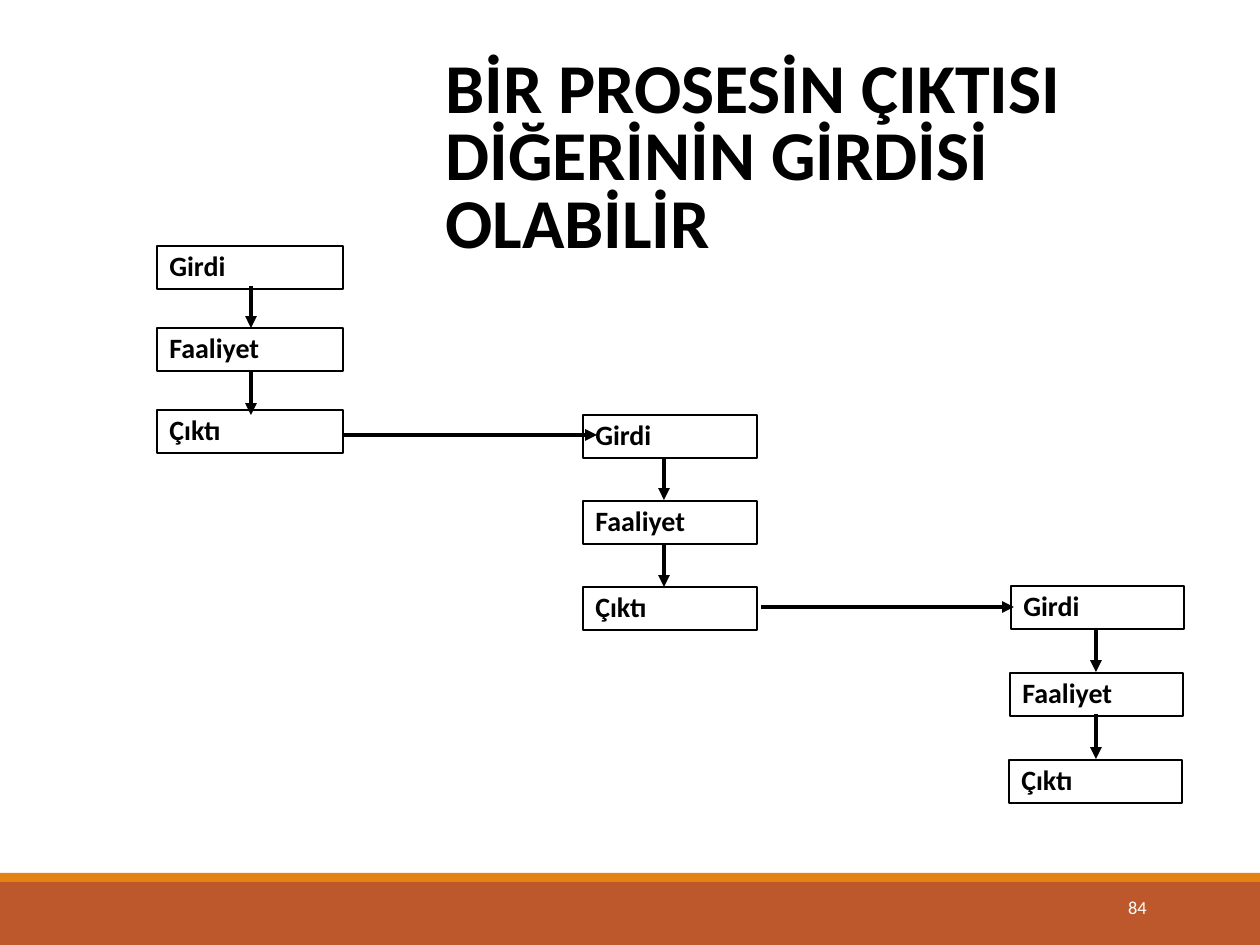
from lxml import etree
from pptx import Presentation
from pptx.dml.color import RGBColor
from pptx.enum import shapes, text
from pptx.oxml.ns import qn
from pptx import util as u

PX = 914400 // 126
BLACK, WHITE = "000000", "FFFFFF"
STEPS = ("Girdi", "Faaliyet", "Çıktı")
BOX_H = 43


def px(n):
    return n * PX


def color(value):
    return RGBColor.from_string(value)


class Deck:
    font = "Calibri"

    def __init__(self, width, height):
        self.prs = Presentation()
        self.prs.slide_width, self.prs.slide_height = px(width), px(height)
        self.slide = self.prs.slides.add_slide(self.prs.slide_layouts[6])

    def rect(self, x, y, w, h, fill=None, line=None):
        sp = self.slide.shapes.add_shape(
            shapes.MSO_SHAPE.RECTANGLE, px(x), px(y), px(w), px(h))
        sp.shadow.inherit = False
        if fill:
            sp.fill.solid()
            sp.fill.fore_color.rgb = color(fill)
        else:
            sp.fill.background()
        if line:
            sp.line.color.rgb = color(line)
            sp.line.width = u.Pt(0.75)
        else:
            sp.line.fill.background()
        return sp

    def set_text(self, sp, words, size, ink=BLACK, bold=True, spacing=1.0,
                 align=text.PP_ALIGN.LEFT):
        tf = sp.text_frame
        tf.word_wrap = True
        tf.vertical_anchor = text.MSO_ANCHOR.TOP
        tf.text = words
        p = tf.paragraphs[0]
        p.alignment, p.line_spacing = align, spacing
        font = p.runs[0].font
        font.name, font.size, font.bold = self.font, u.Pt(size), bold
        font.color.rgb = color(ink)
        return tf

    def text_box(self, x, y, w, h, words, size, **style):
        sp = self.slide.shapes.add_textbox(px(x), px(y), px(w), px(h))
        return self.set_text(sp, words, size, **style)

    def step_box(self, x, y, w, words):
        sp = self.rect(x, y, w, BOX_H, line=BLACK)
        self.set_text(sp, words, 16, spacing=0.9)

    def arrow(self, x1, y1, x2, y2):
        cx = self.slide.shapes.add_connector(
            shapes.MSO_CONNECTOR.STRAIGHT, px(x1), px(y1), px(x2), px(y2))
        cx.line.color.rgb = color(BLACK)
        cx.line.width = u.Pt(2.25)
        sp_pr = cx._element.spPr
        etree.SubElement(sp_pr.find(qn("a:ln")), qn("a:tailEnd"),
                         type="triangle")
        etree.SubElement(sp_pr, qn("a:effectLst"))

    def process(self, x, y, w, pitch, drift, arrow_x, arrow_spans):
        """Three stacked steps; drift is the sideways shift per step."""
        for i, step in enumerate(STEPS):
            self.step_box(x + i * drift, y + i * pitch, w, step)
        for start, end in arrow_spans:
            self.arrow(arrow_x, start, arrow_x, end)


def main():
    deck = Deck(1260, 945)
    deck.rect(0, 882, 1260, 63, fill="BD582C")
    deck.rect(0, 873, 1260, 9, fill="E48312")

    deck.process(157, 246, 186, 82, 0, 251, [(286, 328), (370, 415)])
    deck.process(583, 415, 174, 86, 0, 664, [(459, 500), (543, 587)])
    deck.process(1011, 586, 173, 87, -1, 1096, [(630, 672), (714, 759)])
    deck.arrow(344, 435, 597, 435)
    deck.arrow(761, 607, 1014, 607)

    title = deck.text_box(433, 49, 708, 227,
                          "BİR PROSESİN ÇIKTISI DİĞERİNİN GİRDİSİ OLABİLİR",
                          40, spacing=0.8)
    title.margin_top = px(11)
    deck.text_box(1023, 890, 136, 50, "84", 10.5, ink=WHITE, bold=False,
                  align=text.PP_ALIGN.RIGHT)
    deck.prs.save("out.pptx")


if __name__ == "__main__":
    main()
